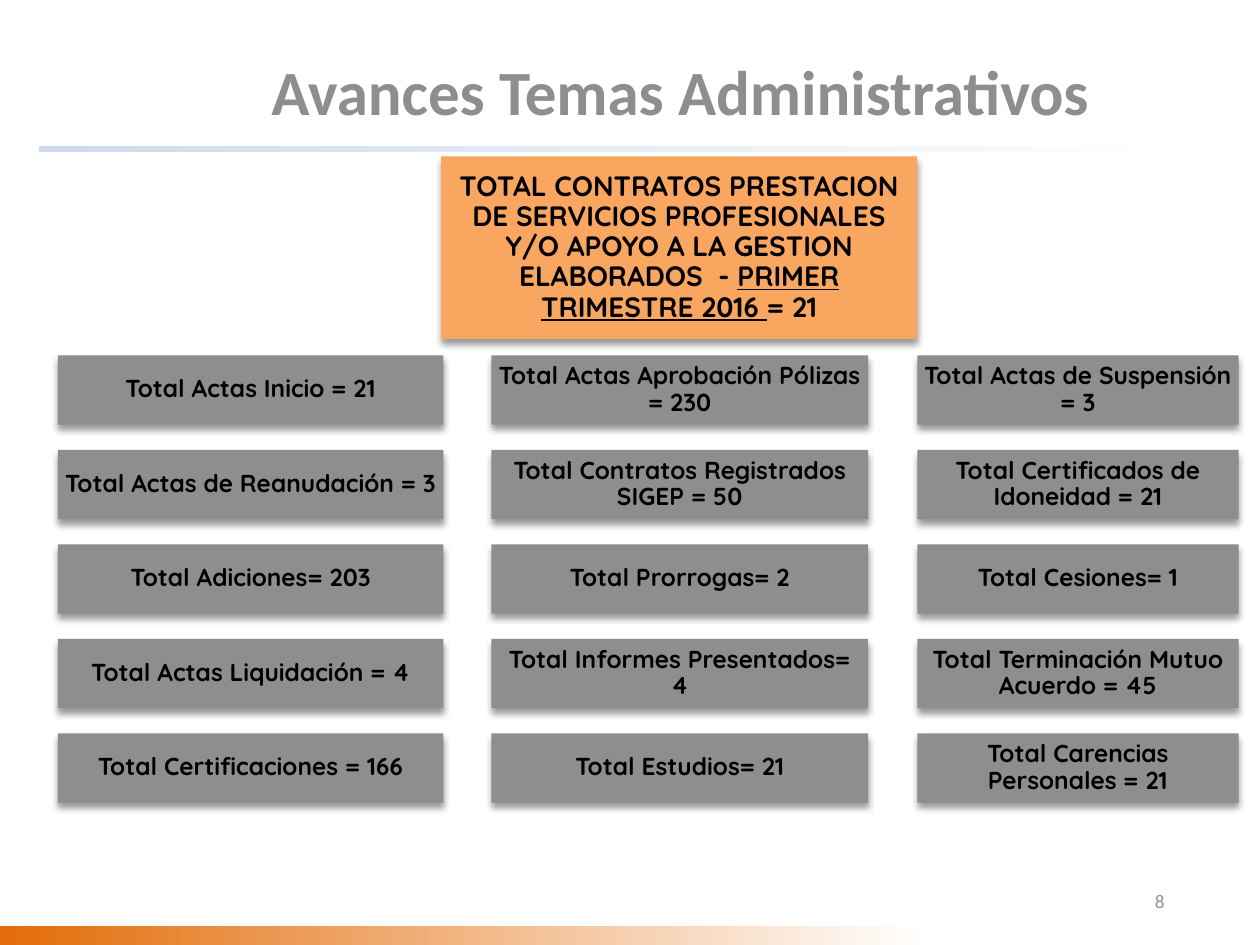
from lxml import etree
from pptx import Presentation
from pptx.dml.color import RGBColor
from pptx.enum.shapes import MSO_SHAPE
from pptx.enum.text import MSO_ANCHOR, MSO_AUTO_SIZE, PP_ALIGN
from pptx.oxml.ns import qn
from pptx.util import Inches, Pt

RECT = MSO_SHAPE.RECTANGLE
TOP, MIDDLE = MSO_ANCHOR.TOP, MSO_ANCHOR.MIDDLE
CENTER = PP_ALIGN.CENTER
NO_FIT = MSO_AUTO_SIZE.NONE

COLORS = {"blue": "CDDBEC", "deep_orange": "E36C09", "orange": "F9A661",
          "gray": "8E8E8E", "number": "8E939E", "black": "000000", "white": "FFFFFF"}

TITLE = "Avances Temas Administrativos"
PAGE_NUMBER = "8"
HEADLINE = [
    ("TOTAL CONTRATOS PRESTACION DE SERVICIOS PROFESIONALES "
     "Y/O APOYO A LA GESTION ELABORADOS  - ", False),
    ("PRIMER TRIMESTRE 2016 ", True),
    ("= 21", False),
]
TOTALS = [
    ("Total Actas Inicio = 21", "Total Actas Aprobación Pólizas = 230",
     "Total Actas de Suspensión = 3"),
    ("Total Actas de Reanudación = 3", "Total Contratos Registrados SIGEP = 50",
     "Total Certificados de Idoneidad = 21"),
    ("Total Adiciones= 203", "Total Prorrogas= 2", "Total Cesiones= 1"),
    ("Total Actas Liquidación = 4", "Total Informes Presentados= 4",
     "Total Terminación Mutuo Acuerdo = 45"),
    ("Total Certificaciones = 166", "Total Estudios= 21",
     "Total Carencias Personales = 21"),
]
COLUMNS = [(0.46, 3.06), (3.9, 2.99), (7.28, 2.55)]
ROW_TOP, ROW_PITCH, ROW_HEIGHT = 2.82, 0.75, 0.55
BANDS = [((0.31, 1.16, 9.39, 0.05), "blue"), ((0, 7.35, 7.35, 0.15), "deep_orange")]


def rgb(name):
    """Return the named palette colour."""
    return RGBColor.from_string(COLORS[name])


def write(tf, runs, font, size, color, bold=False, anchor=MIDDLE):
    """Fill a text frame with one centred paragraph and return it."""
    tf.word_wrap = True
    tf.auto_size = NO_FIT
    tf.vertical_anchor = anchor
    p = tf.paragraphs[0]
    p.alignment = CENTER
    for text, underline in runs:
        r = p.add_run()
        r.text = text
        r.font.name, r.font.size, r.font.bold = font, Pt(size), bold
        r.font.underline = underline
        r.font.color.rgb = rgb(color)
    return p


def add_rect(slide, box):
    """Add a rectangle without outline or inherited shadow."""
    sp = slide.shapes.add_shape(RECT, *map(Inches, box))
    sp.shadow.inherit = False
    sp.line.fill.background()
    return sp


def add_band(slide, box, color):
    """Add a band that fades from a colour to white."""
    fill = add_rect(slide, box).fill
    fill.gradient()
    fill.gradient_angle = 0
    for stop, name in zip(fill.gradient_stops, (color, "white")):
        stop.color.rgb = rgb(name)


def add_card(slide, box, color, runs, size):
    """Add a filled card with a soft shadow below it."""
    sp = add_rect(slide, box)
    sp.fill.solid()
    sp.fill.fore_color.rgb = rgb(color)
    effects = sp._element.spPr.find(qn("a:effectLst"))
    shadow = etree.SubElement(effects, qn("a:outerShdw"), blurRad=str(Pt(4)),
                              dist=str(Pt(3)), dir="5400000", rotWithShape="0")
    clr = etree.SubElement(shadow, qn("a:srgbClr"), val=COLORS["black"])
    etree.SubElement(clr, qn("a:alpha"), val="40000")
    tf = sp.text_frame
    tf.margin_left = tf.margin_right = Inches(0.05)
    tf.margin_top = tf.margin_bottom = Inches(0.03)
    write(tf, runs, "Quicksand", size, "black", bold=True).line_spacing = 0.9


def main():
    """Build the slide of administrative progress totals."""
    prs = Presentation()
    prs.slide_width, prs.slide_height = Inches(10), Inches(7.5)
    slide = prs.slides.add_slide(prs.slide_layouts[5])

    title = slide.shapes.title
    title.left, title.top = Inches(1.62), Inches(0.37)
    title.width, title.height = Inches(7.56), Inches(1.31)
    write(title.text_frame, [(TITLE, False)], "Calibri", 36, "gray", True, TOP)

    for box, color in BANDS:
        add_band(slide, box, color)

    number = slide.shapes.add_textbox(*map(Inches, (8.91, 6.95, 0.59, 0.4)))
    write(number.text_frame, [(PAGE_NUMBER, False)], "Calibri", 11, "number")

    add_card(slide, (3.5, 1.24, 3.78, 1.45), "orange", HEADLINE, 16)
    for i, row in enumerate(TOTALS):
        top = ROW_TOP + i * ROW_PITCH
        for (left, width), text in zip(COLUMNS, row):
            add_card(slide, (left, top, width, ROW_HEIGHT), "gray", [(text, False)], 14)

    prs.save("out.pptx")


if __name__ == "__main__":
    main()
